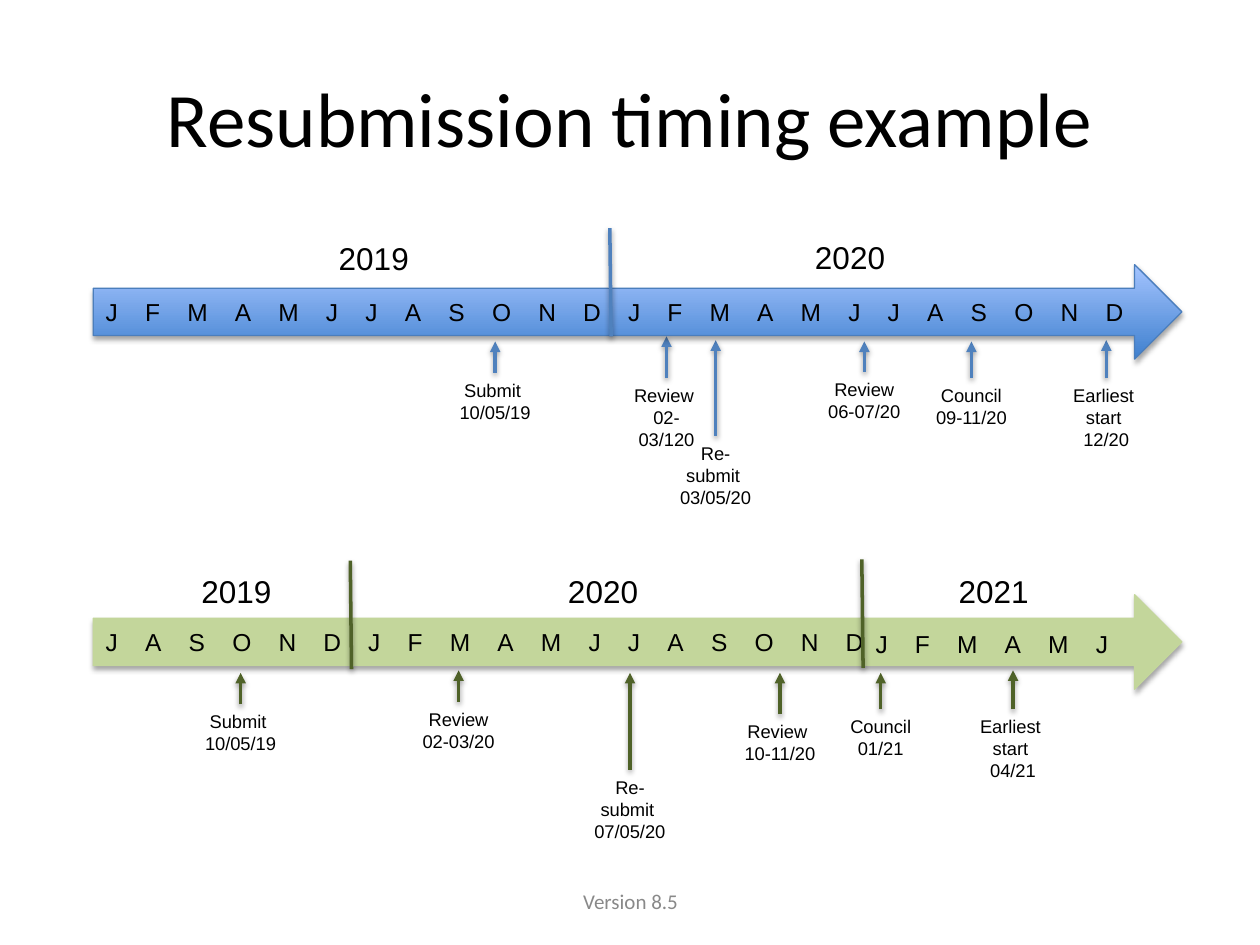
from itertools import accumulate
from lxml.etree import SubElement as Sub
from pptx import Presentation
from pptx.dml.color import RGBColor
from pptx.enum.shapes import MSO_CONNECTOR as Line, MSO_SHAPE as Shape
from pptx.enum.text import MSO_ANCHOR as Anchor, PP_ALIGN as Align
from pptx.oxml.ns import qn
from pptx.util import Inches, Pt

COLORS = {"black": "000000", "grey": "898989", "blue": "4F81BD",
          "green": "4F6228", "edge": "4B7EBC", "low": "3F80CE",
          "high": "A4C4FF", "pale": "C3D69B"}

# Years: (text, left, top); months: (letters, left, top);
# breaks: (x, top); events: (lines, x, label top, arrow tip)
BANDS = [
    {"top": 2.1, "fill": ("low", "high"), "edge": "edge", "ink": "blue",
     "years": [("2019", 2.59, 1.85), ("2020", 6.37, 1.84)],
     "months": [("JFMAMJJASOND" * 2, 0.74, 2.31)],
     "breaks": [(4.84, 1.81)],
     "events": [
         (["Submit ", "10/05/19"], 3.93, 2.96, 2.71),
         (["Review ", "02-03/120"], 5.29, 3, 2.67),
         (["Re-submit ", "03/05/20"], 5.68, 3.46, 2.7),
         (["Review", "06-07/20"], 6.86, 2.95, 2.71),
         (["Council", "09-11/20"], 7.71, 3, 2.71),
         (["Earliest ", "start ", "12/20"], 8.78, 3, 2.7)]},
    {"top": 4.72, "fill": ("pale",), "edge": "pale", "ink": "green",
     "years": [("2019", 1.5, 4.49), ("2020", 4.41, 4.49),
               ("2021", 7.51, 4.49)],
     "months": [("JASOND" + "JFMAMJJASOND", 0.74, 4.93),
                ("JFMAMJ", 6.85, 4.94)],
     "breaks": [(2.78, 4.45), (6.84, 4.44)],
     "events": [
         (["Submit ", "10/05/19"], 1.91, 5.59, 5.34),
         (["Review", "02-03/20"], 3.64, 5.57, 5.32),
         (["Re-submit ", "07/05/20"], 5, 6.11, 5.34),
         (["Review ", "10-11/20"], 6.19, 5.67, 5.34),
         (["Council", "01/21"], 6.99, 5.63, 5.34),
         (["Earliest ", "start ", "04/21"], 8.04, 5.63, 5.32)]},
]

# Letter widths and the gap between months, in ems
WIDTHS = {"J": 0.5, "F": 0.61, "M": 0.83, "A": 0.67,
          "S": 0.67, "O": 0.78, "N": 0.72, "D": 0.72}
GAP = 1.11
EM = 14 / 72

prs = Presentation()
prs.slide_width, prs.slide_height = Inches(10), Inches(7.5)
slide = prs.slides.add_slide(prs.slide_layouts[5])
shapes = slide.shapes


def rgb(name):
    return RGBColor.from_string(COLORS[name])


def shade(shape, dist, alpha):
    props = shape._element.spPr
    for old in props.findall(qn("a:effectLst")):
        props.remove(old)
    glow = Sub(Sub(props, qn("a:effectLst")), qn("a:outerShdw"),
               blurRad=str(Pt(3.1)), dist=str(Pt(dist)), dir="5400000",
               rotWithShape="0")
    tone = Sub(glow, qn("a:srgbClr"), val=COLORS["black"])
    Sub(tone, qn("a:alpha"), val=str(alpha * 1000))


def add_text(lines, x, y, w, h, size, align=Align.LEFT, wrap=False,
             font="Arial", color="black", stops=()):
    box = shapes.add_textbox(Inches(x), Inches(y), Inches(w), Inches(h))
    frame = box.text_frame
    frame.word_wrap = wrap
    frame.text = "\n".join(lines)
    for para in frame.paragraphs:
        para.alignment = align
        if stops:
            tabs = Sub(para._p.get_or_add_pPr(), qn("a:tabLst"))
            for pos in stops:
                Sub(tabs, qn("a:tab"), pos=str(Inches(pos)), algn="l")
        para.font.size = Pt(size)
        para.font.name = font
        para.font.color.rgb = rgb(color)
    return frame


def add_line(x1, y1, x2, y2, color, head=False):
    line = shapes.add_connector(Line.STRAIGHT, Inches(x1), Inches(y1),
                                Inches(x2), Inches(y2))
    line.line.color.rgb = rgb(color)
    line.line.width = Pt(2)
    if head:
        Sub(line.line._get_or_add_ln(), qn("a:tailEnd"), type="triangle")
    shade(line, 1.6, 38)


def add_band(top, fill, edge):
    arrow = shapes.add_shape(Shape.RIGHT_ARROW, Inches(0.74), Inches(top),
                             Inches(8.64), Inches(0.75))
    if len(fill) == 2:
        arrow.fill.gradient()
        arrow.fill.gradient_angle = 90
        for stop, name, pos in zip(arrow.fill.gradient_stops, fill, (0, 1)):
            stop.color.rgb = rgb(name)
            stop.position = pos
    else:
        arrow.fill.solid()
        arrow.fill.fore_color.rgb = rgb(fill[0])
    arrow.line.color.rgb = rgb(edge)
    arrow.line.width = Pt(0.75)
    shade(arrow, 1.8, 35)


def add_months(row, x, y):
    stops = list(accumulate((WIDTHS[m] + GAP) * EM for m in row))
    add_text(["\t".join(row)], x, y, stops[-1] + 0.1, 0.34, 14,
             wrap=True, stops=stops[:-1])


# Title and footer
title = shapes.title
title.left, title.top = Inches(0.5), Inches(0.3)
title.width, title.height = Inches(9), Inches(1.25)
title.text = "Resubmission timing example"
font = title.text_frame.paragraphs[0].font
font.size, font.name, font.color.rgb = Pt(44), "Calibri", rgb("black")
foot = add_text(["Version 8.5"], 3.42, 6.95, 3.17, 0.4, 12, Align.CENTER,
                True, "Calibri", "grey")
foot.vertical_anchor = Anchor.MIDDLE

# Timelines
for band in BANDS:
    ink = band["ink"]
    for lines, x, y, tip in band["events"]:
        add_text(lines, x - 0.4, y, 0.8, 0.1 + 0.18 * len(lines), 10.5,
                 Align.CENTER)
        add_line(x, y, x, tip, ink, head=True)
    for year, x, y in band["years"]:
        add_text([year], x, y, 0.76, 0.4, 18)
    add_band(band["top"], band["fill"], band["edge"])
    for row in band["months"]:
        add_months(*row)
    for x, y in band["breaks"]:
        add_line(x, y, x + 0.01, y + 0.86, ink)

prs.save("out.pptx")
